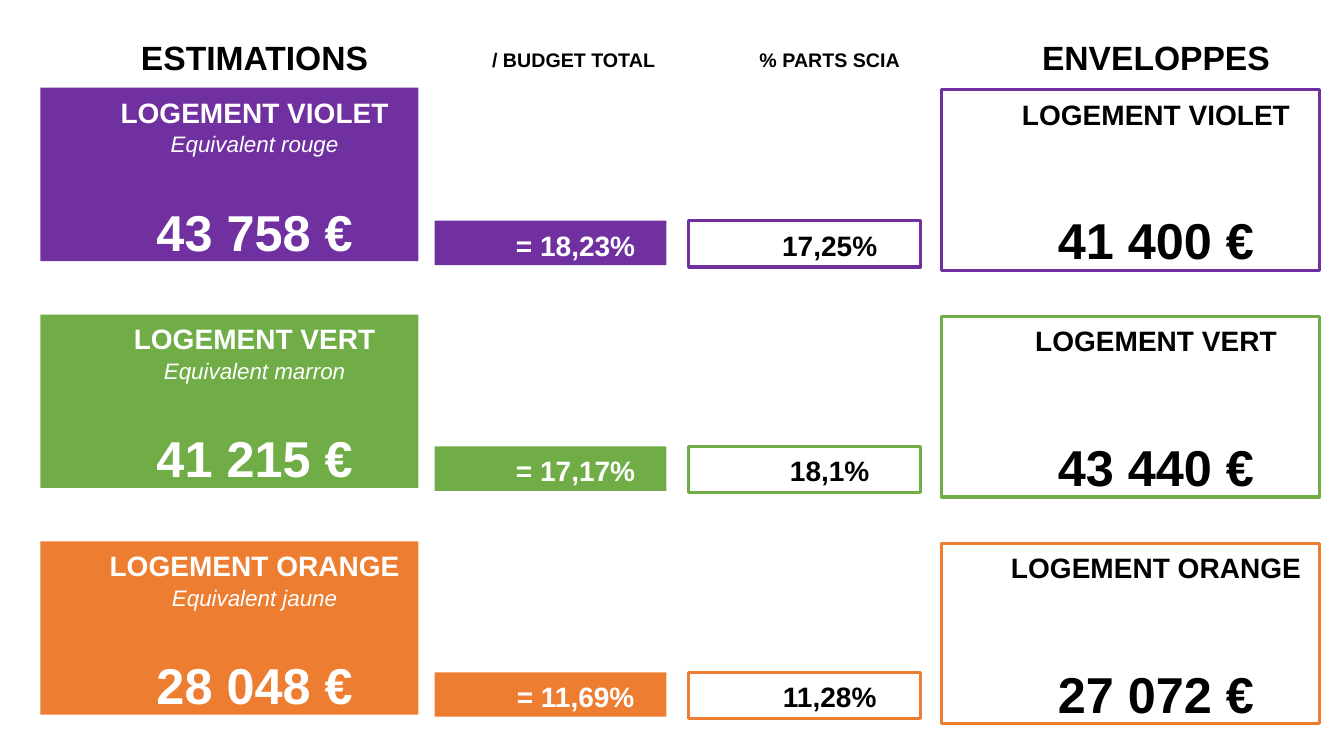
import pptx
import pptx.util
import pptx.dml.color
import pptx.enum.shapes
import pptx.enum.text
from dataclasses import dataclass
from typing import NamedTuple


@dataclass(frozen=True)
class Theme:
    font: str = "Arial"
    violet: str = "7030A0"
    green: str = "70AD47"
    orange: str = "ED7D31"
    white: str = "FFFFFF"
    black: str = "000000"
    heading: int = 24
    small_heading: int = 14
    label: int = 20
    subtitle: int = 16
    amount: int = 36
    border: float = 2.25
    line_spacing: float = 1.07
    indent: float = 0.5


class Box(NamedTuple):
    left: float
    top: float
    width: float
    height: float

    def inches(self):
        return [pptx.util.Inches(length) for length in self]


class Line(NamedTuple):
    text: str
    size: int
    bold: bool = True
    italic: bool = False
    space_before: float = 0
    level: int = 0


class Housing(NamedTuple):
    name: str
    equivalent: str
    estimate: str
    budget_share: str
    scia_share: str
    envelope: str
    color: str


THEME = Theme()
PAGE = Box(0, 0, 13.33, 7.5)
CARD_WIDTH, SHARE_WIDTH = 3.75, 2.3
ESTIMATE_X, BUDGET_X, SCIA_X, ENVELOPE_X = 0.4, 4.31, 6.83, 9.34
FIRST_ROW, ROW_PITCH = 0.87, 2.25

HOUSINGS = [
    Housing("LOGEMENT VIOLET", "Equivalent rouge", "43 758 €", "= 18,23%",
            "17,25%", "41 400 €", THEME.violet),
    Housing("LOGEMENT VERT", "Equivalent marron", "41 215 €", "= 17,17%",
            "18,1%", "43 440 €", THEME.green),
    Housing("LOGEMENT ORANGE", "Equivalent jaune", "28 048 €", "= 11,69%",
            "11,28%", "27 072 €", THEME.orange),
]


def rgb(color):
    return pptx.dml.color.RGBColor.from_string(color)


def write_lines(shape, lines, color):
    frame = shape.text_frame
    frame.word_wrap = True
    frame.vertical_anchor = pptx.enum.text.MSO_ANCHOR.TOP
    for index, line in enumerate(lines):
        para = frame.add_paragraph() if index else frame.paragraphs[0]
        para.alignment = pptx.enum.text.PP_ALIGN.CENTER
        para.level = line.level
        para.line_spacing = THEME.line_spacing
        if line.space_before:
            para.space_before = pptx.util.Pt(line.space_before)
        properties = para._p.get_or_add_pPr()
        properties.set("marL", str(pptx.util.Inches(THEME.indent)))
        properties.set("indent", "0")
        span = para.add_run()
        span.text = line.text
        span.font.name = THEME.font
        span.font.size = pptx.util.Pt(line.size)
        span.font.bold = line.bold
        span.font.italic = line.italic
        span.font.color.rgb = rgb(color)


def add_panel(page, box, lines, color, filled):
    """Add a solid panel with white text, or an outlined one with black text."""
    panel = page.shapes.add_shape(
        pptx.enum.shapes.MSO_SHAPE.RECTANGLE, *box.inches())
    panel.shadow.inherit = False
    panel.fill.solid()
    panel.fill.fore_color.rgb = rgb(color if filled else THEME.white)
    if filled:
        panel.line.fill.background()
    else:
        panel.line.color.rgb = rgb(color)
        panel.line.width = pptx.util.Pt(THEME.border)
    write_lines(panel, lines, THEME.white if filled else THEME.black)


def add_headings(page, box):
    large, small = THEME.heading, THEME.small_heading
    headings = [
        ("ESTIMATIONS", large, ESTIMATE_X, CARD_WIDTH, 0, 0.5),
        ("/ BUDGET TOTAL", small, 4.16, 2.56, 0.12, 0.33),
        ("% PARTS SCIA", small, SCIA_X, SHARE_WIDTH, 0.12, 0.33),
        ("ENVELOPPES", large, ENVELOPE_X, CARD_WIDTH, 0, 0.5),
    ]
    for text, size, left, width, drop, height in headings:
        place = Box(box.left + left, box.top + drop, width, height)
        heading = page.shapes.add_textbox(*place.inches())
        write_lines(heading, [Line(text, size)], THEME.black)


def add_housing_row(page, box, housing, share_top):
    """Place one housing's estimate, two shares and envelope inside the box."""
    name = Line(housing.name, THEME.label)
    estimate = [
        name,
        Line(housing.equivalent, THEME.subtitle, bold=False, italic=True),
        Line(housing.estimate, THEME.amount, space_before=28, level=1),
    ]
    envelope = [
        name,
        Line(housing.envelope, THEME.amount, space_before=53, level=1),
    ]
    budget = [Line(housing.budget_share, THEME.label)]
    scia = [Line(housing.scia_share, THEME.label)]
    panels = [
        (ESTIMATE_X, 0, CARD_WIDTH, 1.72, estimate, True),
        (BUDGET_X, share_top, SHARE_WIDTH, 0.44, budget, True),
        (SCIA_X, share_top, SHARE_WIDTH, 0.46, scia, False),
        (ENVELOPE_X, 0.02, CARD_WIDTH, 1.79, envelope, False),
    ]
    for left, drop, width, height, lines, filled in panels:
        place = Box(box.left + left, box.top + drop, width, height)
        add_panel(page, place, lines, housing.color, filled)


def main():
    deck = pptx.Presentation()
    deck.slide_width = pptx.util.Inches(PAGE.width)
    deck.slide_height = pptx.util.Inches(PAGE.height)
    page = deck.slides.add_slide(deck.slide_layouts[6])
    add_headings(page, Box(0, 0.29, PAGE.width, 0.5))
    for index, housing in enumerate(HOUSINGS):
        row = Box(0, FIRST_ROW + index * ROW_PITCH, PAGE.width, 1.81)
        add_housing_row(page, row, housing, share_top=1.32 - 0.01 * index)
    deck.save("out.pptx")


if __name__ == "__main__":
    main()
